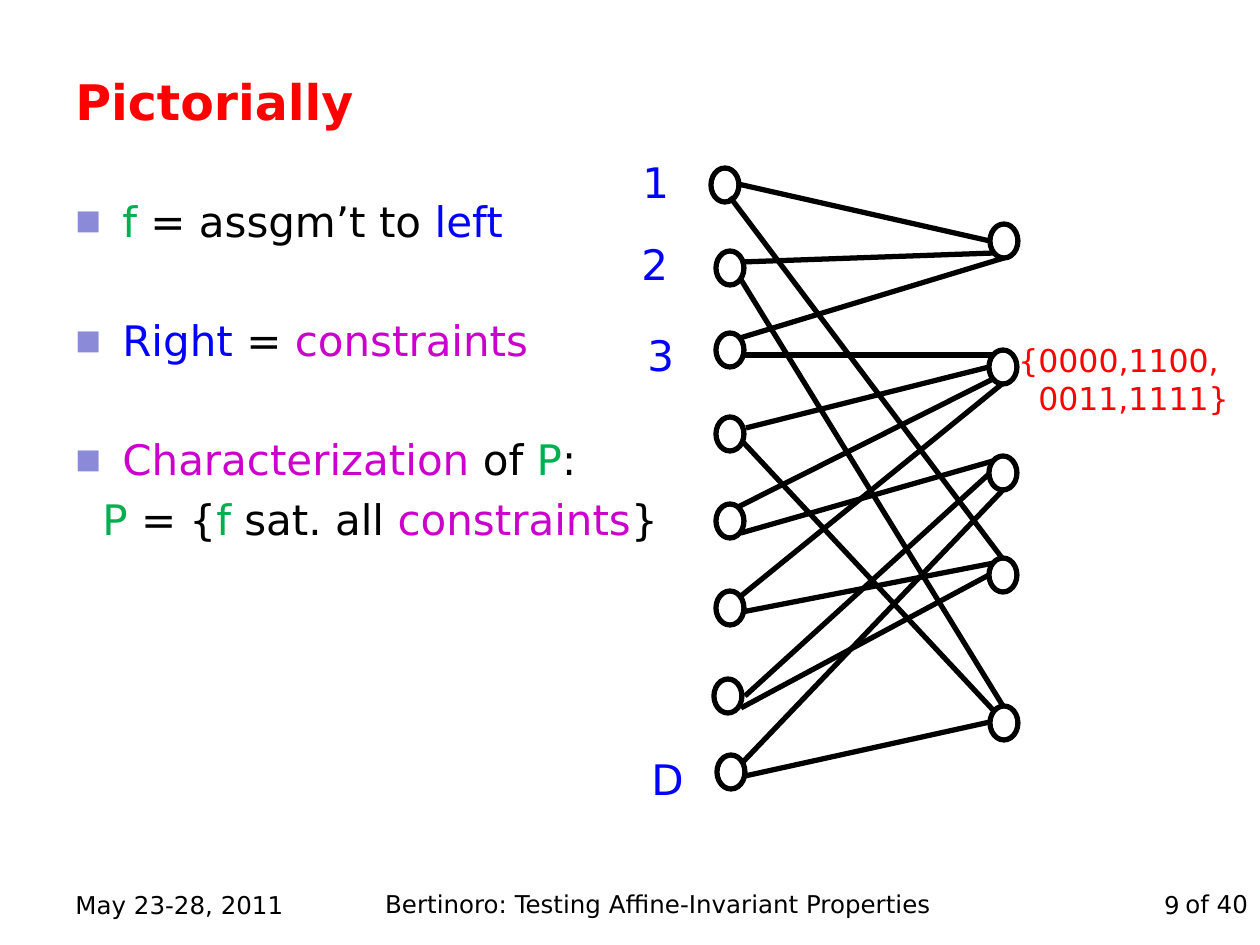
import pptx
import pptx.util
import pptx.dml.color
import pptx.enum.shapes
import pptx.enum.text
import pptx.oxml
import lxml.etree

SCALE = 914400 / 126  # EMU per px
FONT = "DejaVu Sans"
INK = {"black": "000000", "white": "FFFFFF", "red": "FF0000", "blue": "0000FF",
       "green": "00B050", "pink": "CC00CC", "mark": "8A8AD8"}
ALIGN = pptx.enum.text.PP_ALIGN
ANCHOR = pptx.enum.text.MSO_ANCHOR

NODE = (28, 34)
LEFT = [(711, 168), (716, 251), (716, 333), (716, 417),
        (716, 504), (716, 591), (714, 679), (717, 755)]
RIGHT = [(990, 224), (989, 350), (989, 456), (989, 558), (990, 706)]
EDGES = [
    (738, 184, 990, 241), (738, 507, 993, 379), (741, 533, 993, 461),
    (741, 596, 1002, 384), (742, 612, 994, 563), (741, 708, 989, 575),
    (745, 696, 989, 474), (743, 762, 1003, 490), (745, 776, 990, 722),
    (730, 197, 1002, 558), (742, 262, 994, 253), (740, 278, 1003, 706),
    (740, 338, 1004, 258), (741, 355, 993, 355), (746, 428, 989, 367),
    (743, 442, 994, 711),
]
LABELS = [("1", 630, 150, 53), ("2", 629, 232, 53),
          ("3", 635, 323, 53), ("D", 639, 747, 58)]

# Each point: bulleted, space before in points, coloured runs
POINTS = [
    (True, 0, [("f ", "green"), ("= assgm’t to ", "black"), ("left", "blue")]),
    (True, 39.3, [("Right", "blue"), (" = ", "black"), ("constraints", "pink")]),
    (True, 39.3, [("Characterization", "pink"), (" of ", "black"),
                  ("P", "green"), (":", "black")]),
    (False, 5.7, [("P", "green"), (" = {", "black"), ("f", "green"),
                  (" sat. all ", "black"), ("constraints", "pink"), ("}", "black")]),
]


def px(n):
    return pptx.util.Emu(round(n * SCALE))


def rgb(name):
    return pptx.dml.color.RGBColor.from_string(INK[name])


def style(run, size, ink, bold=False):
    run.font.name = FONT
    run.font.size = pptx.util.Pt(size)
    run.font.bold = bold
    run.font.color.rgb = rgb(ink)


def frame(slide, box, wrap=True):
    area = slide.shapes.add_textbox(*map(px, box)).text_frame
    area.word_wrap = wrap
    return area


def text(slide, box, words, size, ink="black", bold=False,
         align=ALIGN.LEFT, anchor=ANCHOR.TOP, wrap=True):
    area = frame(slide, box, wrap)
    area.text = words
    area.vertical_anchor = anchor
    for para in area.paragraphs:
        para.alignment = align
        for run in para.runs:
            style(run, size, ink, bold)
    return area


def indent(para, margin, first=0):
    props = para._p.get_or_add_pPr()
    props.set("marL", str(px(margin)))
    props.set("indent", str(px(first)))
    return props


def bullet(para):
    props = indent(para, 47, -47)
    tint = pptx.oxml.ns.qn("a:buClr")
    color = lxml.etree.SubElement(props, tint)
    lxml.etree.SubElement(color, pptx.oxml.ns.qn("a:srgbClr"), val=INK["mark"])
    lxml.etree.SubElement(props, pptx.oxml.ns.qn("a:buSzPct"), val="65000")
    lxml.etree.SubElement(props, pptx.oxml.ns.qn("a:buFont"), typeface=FONT)
    lxml.etree.SubElement(props, pptx.oxml.ns.qn("a:buChar"), char="■")


def points(slide, box):
    area = frame(slide, box)
    for i, (marked, gap, parts) in enumerate(POINTS):
        para = area.paragraphs[0] if i == 0 else area.add_paragraph()
        para.space_before = pptx.util.Pt(gap)
        if marked:
            bullet(para)
        else:
            indent(para, 27)
        for words, ink in parts:
            run = para.add_run()
            run.text = words
            style(run, 24, ink)


def node(slide, x, y):
    oval = slide.shapes.add_shape(pptx.enum.shapes.MSO_SHAPE.OVAL,
                                  *map(px, (x, y, *NODE)))
    oval.shadow.inherit = False
    oval.fill.solid()
    oval.fill.fore_color.rgb = rgb("white")
    oval.line.color.rgb = rgb("black")
    oval.line.width = pptx.util.Pt(3)


def edge(slide, ends):
    line = slide.shapes.add_connector(pptx.enum.shapes.MSO_CONNECTOR.STRAIGHT,
                                      *map(px, ends))
    line.line.color.rgb = rgb("black")
    line.line.width = pptx.util.Pt(3)
    lxml.etree.SubElement(line._element.spPr, pptx.oxml.ns.qn("a:effectLst"))


def main():
    deck = pptx.Presentation()
    deck.slide_width, deck.slide_height = px(1260), px(945)
    slide = deck.slides.add_slide(deck.slide_layouts[6])

    # Title and points
    text(slide, (63, 53, 1134, 84), "Pictorially", 28, "red", True,
         anchor=ANCHOR.BOTTOM)
    points(slide, (63, 189, 1134, 651))

    # Footer
    low = ANCHOR.BOTTOM
    text(slide, (63, 861, 294, 65), "May 23-28, 2011", 14, anchor=low)
    text(slide, (363, 860, 590, 65), "Bertinoro: Testing Affine-Invariant Properties",
         14, align=ALIGN.CENTER, anchor=low)
    text(slide, (898, 861, 294, 65), "9", 14, align=ALIGN.RIGHT, anchor=low)
    text(slide, (1173, 883, 89, 43), "of 40", 14, wrap=False)

    # Graph
    for spot in LEFT + RIGHT:
        node(slide, *spot)
    for ends in EDGES:
        edge(slide, ends)

    # Labels
    for words, x, y, width in LABELS:
        text(slide, (x, y, width, 63), words, 24, "blue", wrap=False)
    rule = text(slide, (1006, 335, 242, 89), "{0000,1100,\n0011,1111}", 18, "red",
                wrap=False)
    indent(rule.paragraphs[1], 20)

    deck.save("out.pptx")


if __name__ == "__main__":
    main()
